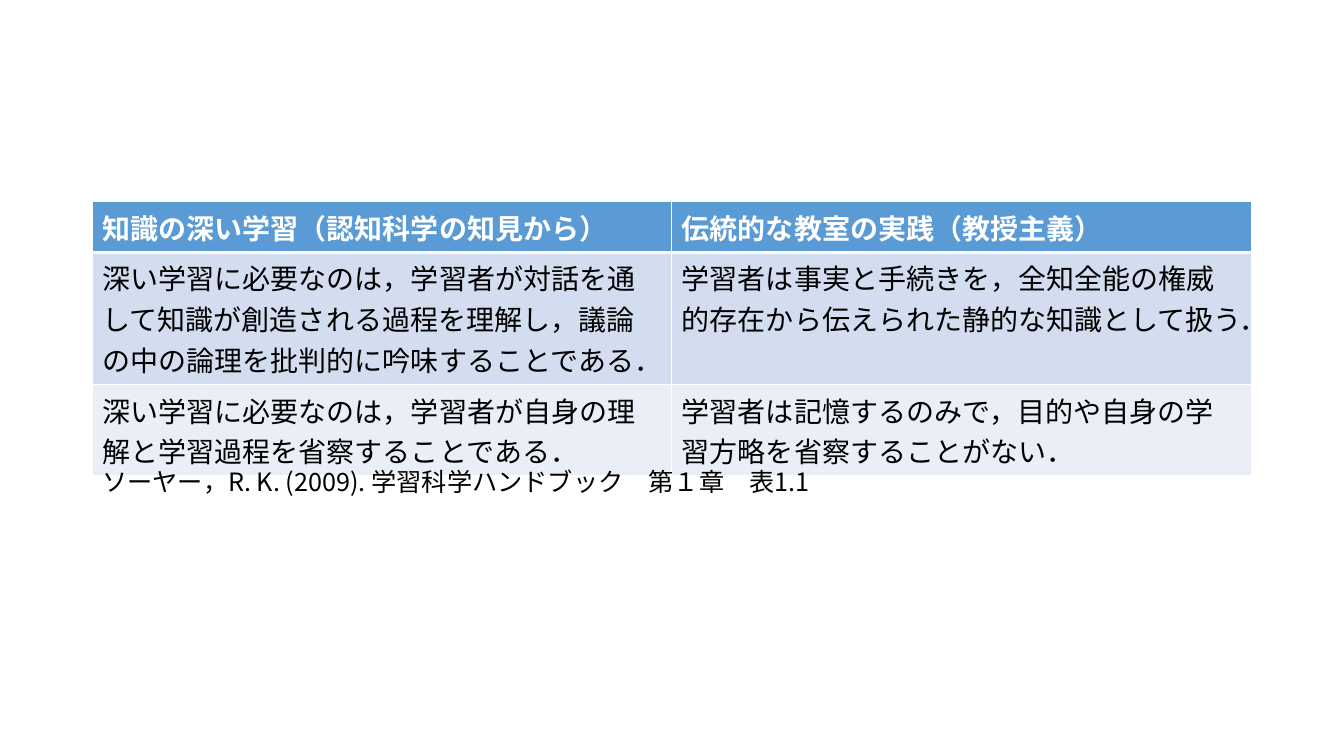
import pptx
import pptx.dml.color
import pptx.enum.lang
import pptx.oxml.ns
import pptx.util
from lxml import etree

Cm = pptx.util.Cm
Pt = pptx.util.Pt
FONT = "Noto Sans CJK JP"
LEFT = Cm(2.33)
COLUMN_WIDTH = Cm(14.6)


def style_paragraph(para, size, color, bold=False):
    font = para.font
    font.size = Pt(size)
    font.bold = bold
    font.name = FONT
    font.language_id = pptx.enum.lang.MSO_LANGUAGE_ID.JAPANESE
    font.color.rgb = pptx.dml.color.RGBColor.from_string(color)
    properties = para._p.get_or_add_pPr().find(pptx.oxml.ns.qn("a:defRPr"))
    east_asian = etree.SubElement(properties, pptx.oxml.ns.qn("a:ea"))
    east_asian.set("typeface", FONT)


def add_border(cell, side, points):
    line = etree.SubElement(cell._tc.get_or_add_tcPr(), pptx.oxml.ns.qn("a:ln" + side))
    line.set("w", str(Pt(points)))
    fill = etree.SubElement(line, pptx.oxml.ns.qn("a:solidFill"))
    etree.SubElement(fill, pptx.oxml.ns.qn("a:srgbClr")).set("val", "FFFFFF")


deck = pptx.Presentation()
deck.slide_width = Cm(33.87)
deck.slide_height = Cm(19.05)
page = deck.slides.add_slide(deck.slide_layouts[6])

# Comparison table
comparison = [
    ("知識の深い学習（認知科学の知見から）", "伝統的な教室の実践（教授主義）"),
    (
        "深い学習に必要なのは，学習者が対話を通して知識が創造される過程を理解し，議論の中の論理を批判的に吟味することである．",
        "学習者は事実と手続きを，全知全能の権威的存在から伝えられた静的な知識として扱う．",
    ),
    (
        "深い学習に必要なのは，学習者が自身の理解と学習過程を省察することである．",
        "学習者は記憶するのみで，目的や自身の学習方略を省察することがない．",
    ),
]
row_fills = ["5B9BD5", "D2DEEF", "EAEFF7"]
row_height = Cm(1.03)
table = page.shapes.add_table(
    3, 2, LEFT, Cm(5.08), COLUMN_WIDTH * 2, row_height * 3
).table
for column in table.columns:
    column.width = COLUMN_WIDTH

for row, texts in enumerate(comparison):
    header = row == 0
    for column, text in enumerate(texts):
        cell = table.cell(row, column)
        cell.text = text
        style_paragraph(
            cell.text_frame.paragraphs[0], 20, "FFFFFF" if header else "000000", header
        )
        # The rule under the header is heavier than the others
        widths = {"L": 1, "R": 1, "T": 3 if row == 1 else 1, "B": 3 if header else 1}
        for side, points in widths.items():
            add_border(cell, side, points)
        cell.fill.solid()
        cell.fill.fore_color.rgb = pptx.dml.color.RGBColor.from_string(row_fills[row])

# Source reference
box = page.shapes.add_textbox(LEFT, Cm(11.63), Cm(18.85), Cm(1.02))
box.text_frame.word_wrap = True
box.text_frame.text = "ソーヤー，R. K. (2009). 学習科学ハンドブック　第１章　表1.1"
style_paragraph(box.text_frame.paragraphs[0], 18, "000000")

deck.save("out.pptx")
